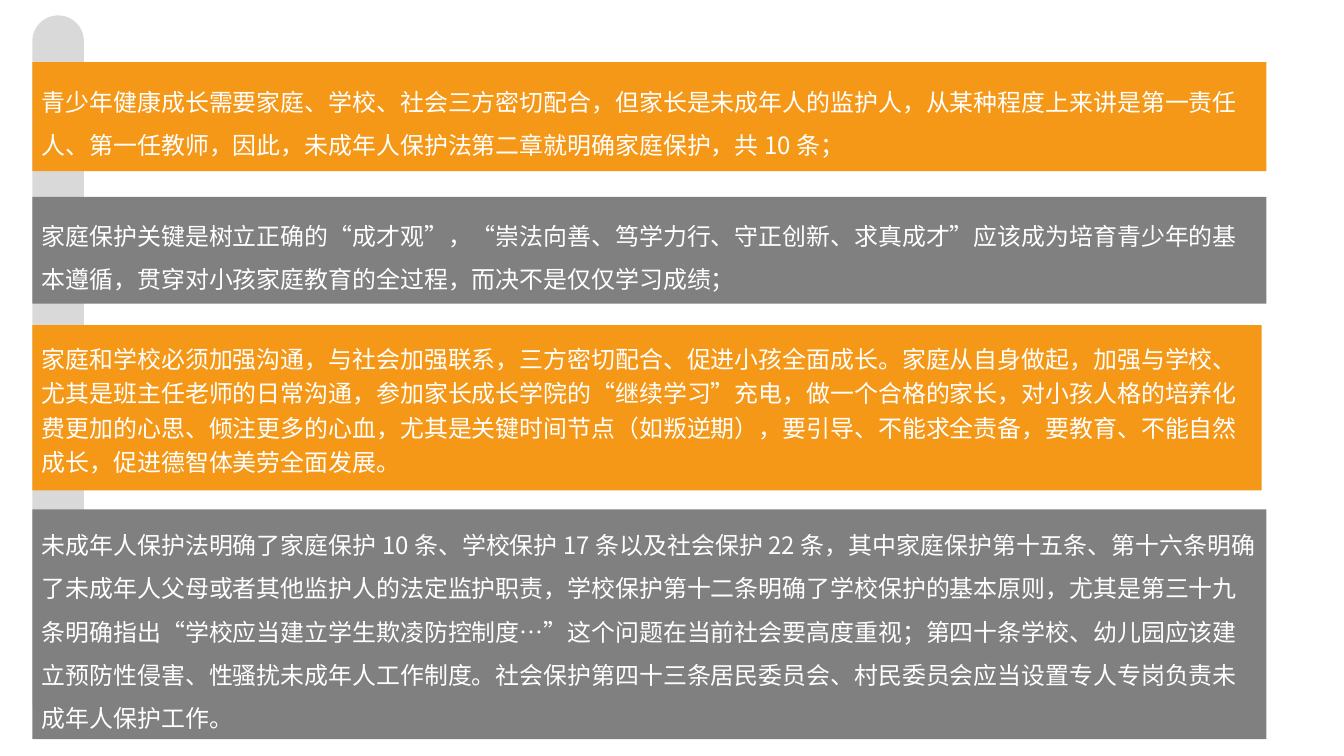
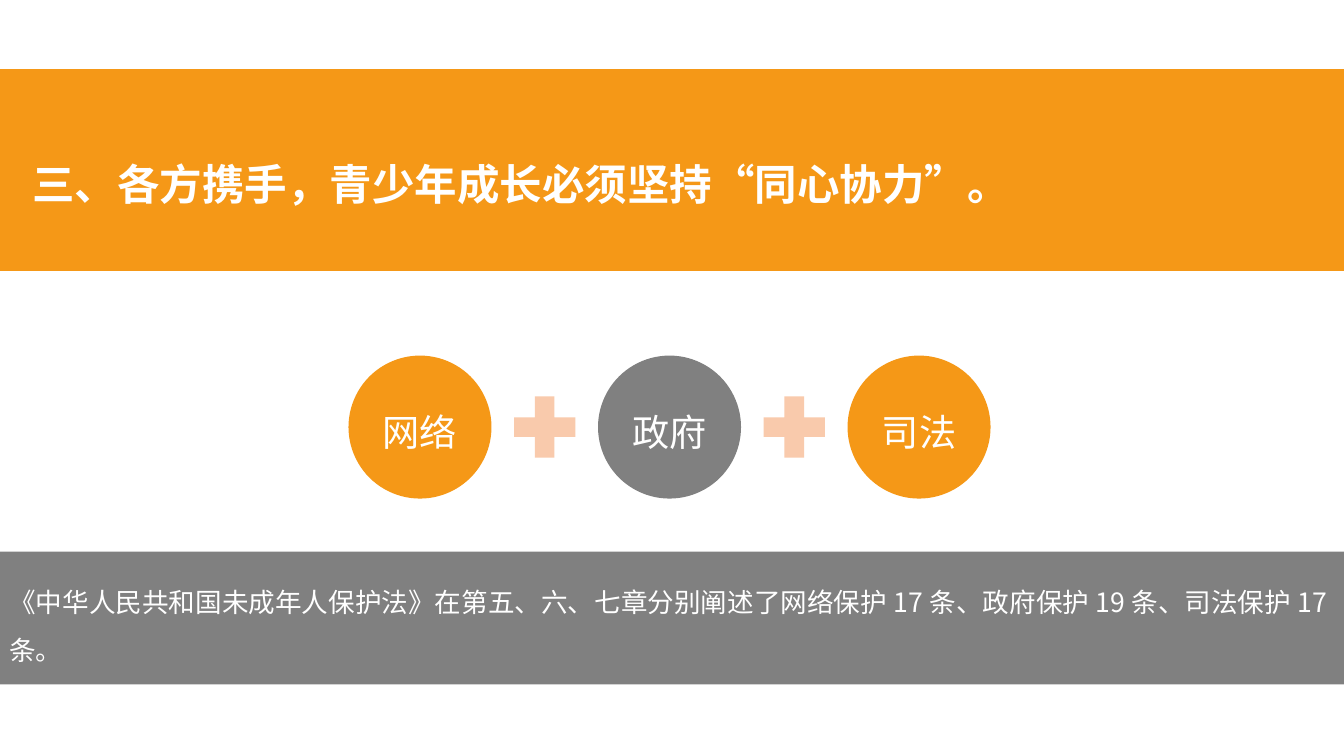
from lxml import etree
from pptx import Presentation
from pptx.dml.color import RGBColor
from pptx.enum import lang, shapes, text
from pptx.oxml import ns
from pptx.util import Cm, Pt

FONT = "Noto Sans CJK SC"
HUES = {"orange": "F59817", "gray": "808080", "post": "D9D9D9",
        "plus": "F9CAAC", "white": "FFFFFF"}
WIDE, HIGH = 35.71, 20.09
KIND = shapes.MSO_SHAPE
LEFT = 0.86

# top, width, height, colour, line spacing, text
BARS = [
    (1.65, 32.79, 2.9, "orange", 1.5,
     "青少年健康成长需要家庭、学校、社会三方密切配合，但家长是未成年人的监护人，"
     "从某种程度上来讲是第一责任人、第一任教师，因此，未成年人保护法第二章就明确"
     "家庭保护，共10条；"),
    (5.23, 32.79, 2.84, "gray", 1.5,
     "家庭保护关键是树立正确的“成才观”，“崇法向善、笃学力行、守正创新、求真成才”"
     "应该成为培育青少年的基本遵循，贯穿对小孩家庭教育的全过程，而决不是仅仅学习成绩；"),
    (8.64, 32.66, 4.39, "orange", 1.2,
     "家庭和学校必须加强沟通，与社会加强联系，三方密切配合、促进小孩全面成长。"
     "家庭从自身做起，加强与学校、尤其是班主任老师的日常沟通，参加家长成长学院的"
     "“继续学习”充电，做一个合格的家长，对小孩人格的培养化费更加的心思、倾注更多的"
     "心血，尤其是关键时间节点（如叛逆期），要引导、不能求全责备，要教育、不能自然"
     "成长，促进德智体美劳全面发展。"),
    (13.54, 32.79, 6.1, "gray", 1.5,
     "未成年人保护法明确了家庭保护10条、学校保护17条以及社会保护22条，其中家庭保护"
     "第十五条、第十六条明确了未成年人父母或者其他监护人的法定监护职责，学校保护"
     "第十二条明确了学校保护的基本原则，尤其是第三十九条明确指出“学校应当建立学生"
     "欺凌防控制度…”这个问题在当前社会要高度重视；第四十条学校、幼儿园应该建立"
     "预防性侵害、性骚扰未成年人工作制度。社会保护第四十三条居民委员会、村民委员会"
     "应当设置专人专岗负责未成年人保护工作。"),
]
TITLE = "三、各方携手，青少年成长必须坚持“同心协力”。"
ROLES = [("网络", "orange"), ("政府", "gray"), ("司法", "orange")]
NOTE = ("《中华人民共和国未成年人保护法》在第五、六、七章分别阐述了"
        "网络保护17条、政府保护19条、司法保护17条。")


def draw(slide, kind, box, hue, adjust=()):
    """Add a flat, borderless shape; box is left, top, width, height in cm."""
    shape = slide.shapes.add_shape(kind, *map(Cm, box))
    shape.shadow.inherit = False
    shape.fill.solid()
    shape.fill.fore_color.rgb = RGBColor.from_string(HUES[hue])
    shape.line.fill.background()
    for i, value in enumerate(adjust):
        shape.adjustments[i] = value
    return shape


def write(shape, words, size, space=1.5, bold=False, inset=(0.25, 0.13),
          align=text.PP_ALIGN.LEFT, anchor=text.MSO_ANCHOR.MIDDLE):
    frame = shape.text_frame
    side, edge = map(Cm, inset)
    look = {"word_wrap": True, "auto_size": text.MSO_AUTO_SIZE.NONE,
            "vertical_anchor": anchor, "margin_left": side,
            "margin_right": side, "margin_top": edge, "margin_bottom": edge}
    for key, value in look.items():
        setattr(frame, key, value)
    para = frame.paragraphs[0]
    para.alignment, para.line_spacing = align, space
    run = para.add_run()
    run.text = words
    style = {"name": FONT, "size": Pt(size), "bold": bold,
             "language_id": lang.MSO_LANGUAGE_ID.SIMPLIFIED_CHINESE}
    for key, value in style.items():
        setattr(run.font, key, value)
    run.font.color.rgb = RGBColor.from_string(HUES["white"])
    props = run._r.get_or_add_rPr()
    props.find(ns.qn("a:latin")).addnext(
        etree.Element(ns.qn("a:ea"), typeface=FONT))


def add_bar(slide, box, hue, words, size, space=1.5):
    write(draw(slide, KIND.PENTAGON, box, hue, (0,)), words, size, space)


def add_points(deck):
    slide = deck.slides.add_slide(deck.slide_layouts[6])
    draw(slide, KIND.ROUND_2_SAME_RECTANGLE, (LEFT, 0.41, 1.37, 18.34),
         "post", (0.5, 0))
    for top, width, height, hue, space, words in BARS:
        add_bar(slide, (LEFT, top, width, height), hue, words, 18, space)


def add_roles(deck):
    slide = deck.slides.add_slide(deck.slide_layouts[5])
    draw(slide, KIND.RECTANGLE, (0, 1.84, WIDE, 5.36), "orange")

    title = slide.shapes.title
    slide.shapes._spTree.append(title._element)  # bring above the band
    spot = {"left": LEFT, "top": 3.51, "width": 33.86, "height": 2.06}
    for key, value in spot.items():
        setattr(title, key, Cm(value))
    write(title, TITLE, 32, bold=True, inset=(0, 0),
          align=text.PP_ALIGN.JUSTIFY, anchor=text.MSO_ANCHOR.TOP)

    first, top, disc, step, plus = 9.26, 9.45, 3.8, 6.63, 2.21
    for i, (name, hue) in enumerate(ROLES):
        left = first + i * step
        if i:
            mid = left - (step - disc) / 2
            draw(slide, KIND.MATH_PLUS,
                 (mid - plus / 2, top + (disc - plus) / 2, plus, plus), "plus")
        circle = draw(slide, KIND.OVAL, (left, top, disc, disc), hue)
        write(circle, name, 28, 1.2, inset=(0.2, 0.2),
              align=text.PP_ALIGN.CENTER)

    add_bar(slide, (0, 14.66, WIDE, 3.53), "gray", NOTE, 20)


def main():
    deck = Presentation()
    deck.slide_width, deck.slide_height = Cm(WIDE), Cm(HIGH)
    add_points(deck)
    add_roles(deck)
    deck.save("out.pptx")


if __name__ == "__main__":
    main()
